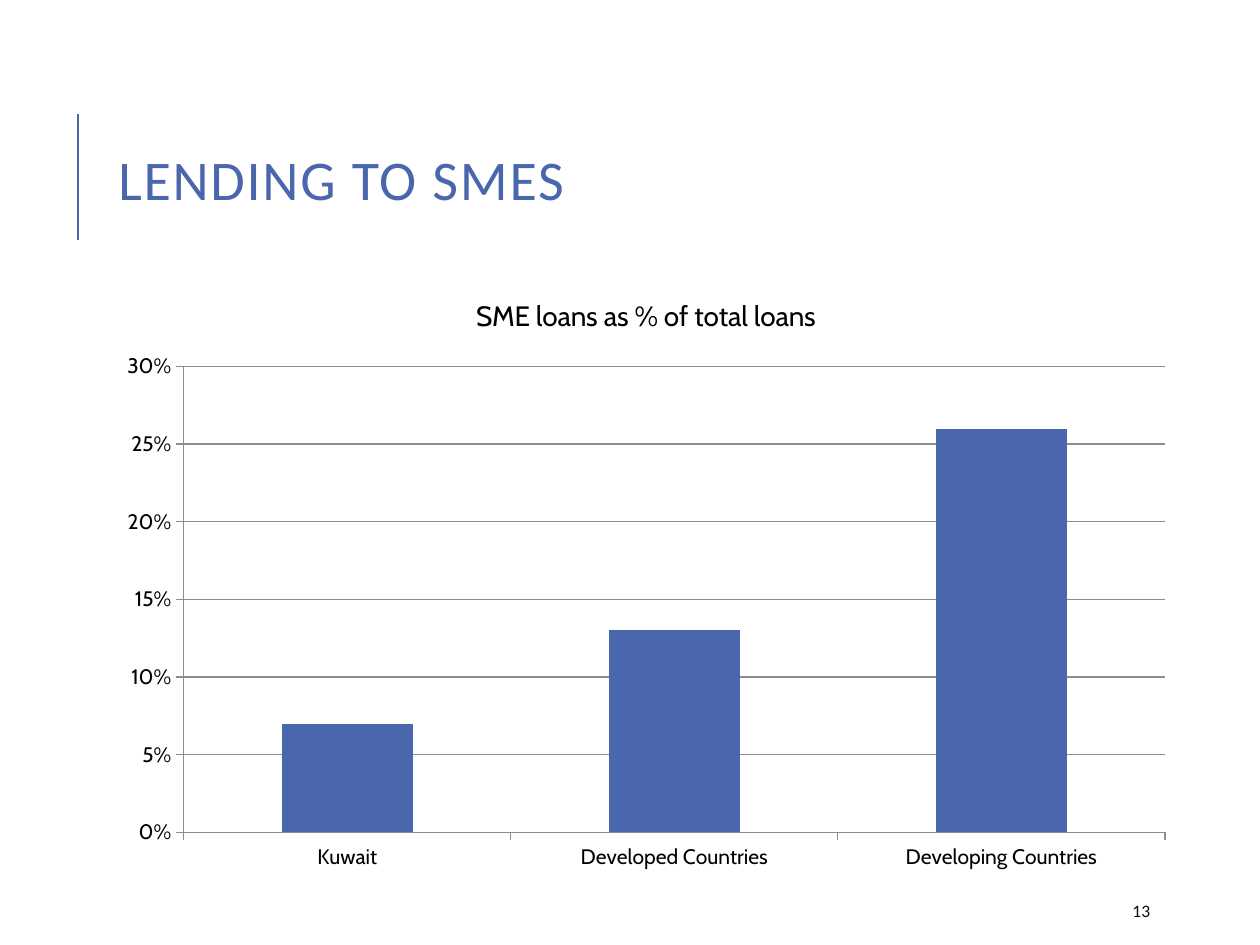
from pptx import Presentation
from pptx.chart.data import CategoryChartData
from pptx.dml.color import RGBColor
from pptx.enum.chart import XL_CHART_TYPE as CT, XL_TICK_MARK as TICK
from pptx.enum.shapes import MSO_CONNECTOR
from pptx.enum.text import MSO_ANCHOR, PP_ALIGN
from pptx.oxml.ns import qn
from pptx.util import Cm, Pt
from lxml import etree

BLUE = RGBColor(0x4A, 0x66, 0xAC)
GRAY = RGBColor(0x8C, 0x8C, 0x8C)
BLACK = RGBColor(0, 0, 0)
DARK = RGBColor(0x0D, 0x0D, 0x0D)


def write(tf, text, font="Calibri", size=10, color=BLACK, spacing=None, line_spacing=None):
    p = tf.paragraphs[0]
    p.alignment = PP_ALIGN.LEFT
    p.line_spacing = line_spacing
    r = p.add_run()
    r.text = text
    r.font.name, r.font.size, r.font.bold = font, Pt(size), False
    r.font.color.rgb = color
    if spacing:
        r.font._element.set("spc", str(int(spacing * 100)))
    tf.word_wrap = True
    tf.vertical_anchor = MSO_ANCHOR.MIDDLE


prs = Presentation()
prs.slide_width, prs.slide_height = Cm(25.4), Cm(19.05)
s = prs.slides.add_slide(prs.slide_layouts[5])

# Accent line beside the title
line = s.shapes.add_connector(MSO_CONNECTOR.STRAIGHT, Cm(1.57), Cm(4.83), Cm(1.57), Cm(2.29))
line.line.color.rgb, line.line.width = BLUE, Pt(1.5)
etree.SubElement(line._element.spPr, qn("a:effectLst"))

# Title
title = s.shapes.title
title.left, title.top, title.width, title.height = Cm(2.13), Cm(1.63), Cm(20.24), Cm(4.17)
write(title.text_frame, "LENDING TO SMES", size=32, color=BLUE, spacing=1, line_spacing=0.8)

# Column chart
data = CategoryChartData(number_format="0%")
data.categories = ["Kuwait", "Developed Countries", "Developing Countries"]
data.add_series("Series 1", [0.07, 0.13, 0.26])
chart = s.shapes.add_chart(CT.COLUMN_CLUSTERED, Cm(2.13), Cm(5.51), Cm(21.79), Cm(12.27), data).chart
chart.has_legend = False
chart.font.name, chart.font.size, chart.font.color.rgb = "Cabin", Pt(10), BLACK
chart.has_title = True
write(chart.chart_title.text_frame, "SME loans as % of total loans", font="Cabin", size=16)
chart.chart_title.text_frame.paragraphs[0].alignment = PP_ALIGN.CENTER
chart.chart_title.include_in_layout = False

plot = chart.plots[0]
plot.gap_width = 150
plot.vary_by_categories = False
fill = plot.series[0].format.fill
fill.solid()
fill.fore_color.rgb = BLUE

# Axes and gridlines
cat_axis, val_axis = chart.category_axis, chart.value_axis
for axis in (cat_axis, val_axis):
    font = axis.tick_labels.font
    font.name, font.size, font.color.rgb = "Cabin", Pt(12), BLACK
    axis.major_tick_mark, axis.minor_tick_mark = TICK.OUTSIDE, TICK.NONE
val_axis.has_major_gridlines = True
for rule in (cat_axis, val_axis, val_axis.major_gridlines):
    rule.format.line.color.rgb, rule.format.line.width = GRAY, Pt(0.75)
val_axis.minimum_scale, val_axis.maximum_scale, val_axis.major_unit = 0, 0.3, 0.05
val_axis.tick_labels.number_format = "0%"
val_axis.tick_labels.number_format_is_linked = False

# Slide number
number = s.shapes.add_textbox(Cm(22.58), Cm(17.98), Cm(2.03), Cm(0.76))
write(number.text_frame, "13", color=DARK)

prs.save("out.pptx")
